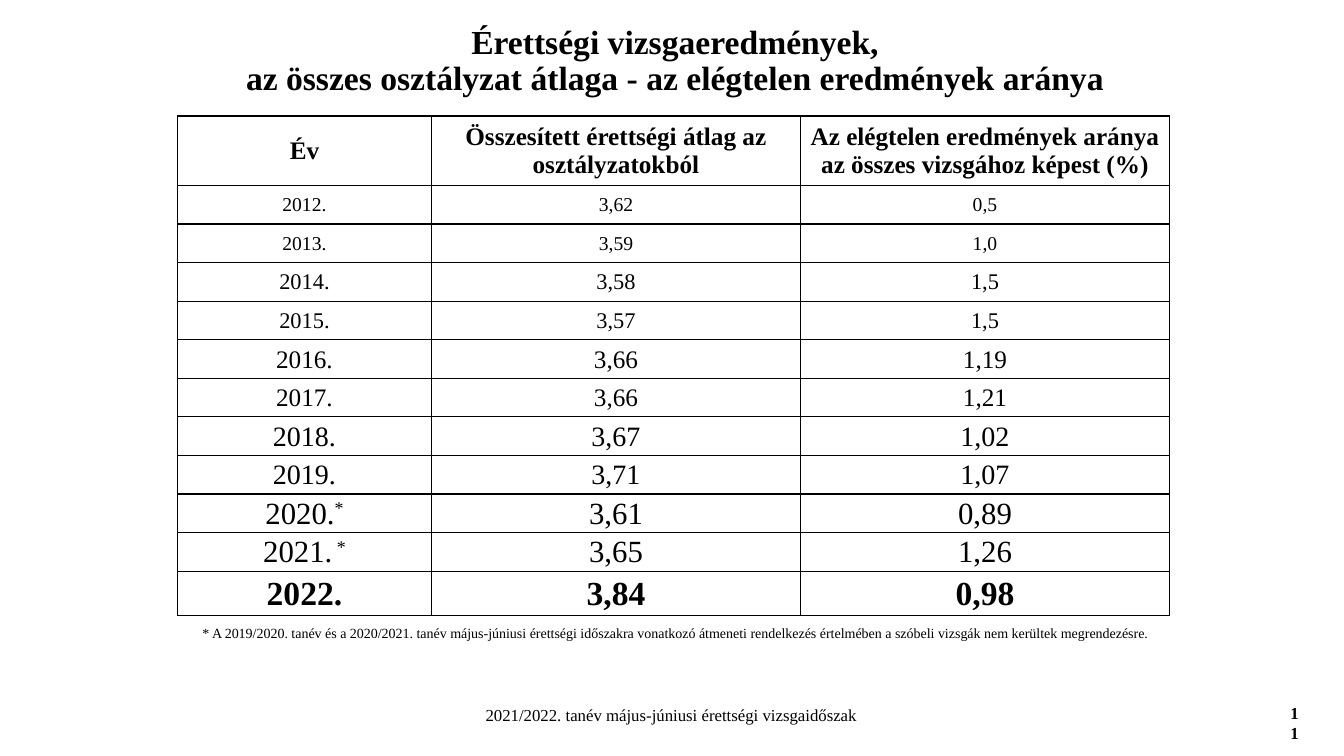
import pptx
import pptx.util
import pptx.dml.color
import pptx.enum.text
import pptx.oxml.ns
import lxml.etree

Inches = pptx.util.Inches
Pt = pptx.util.Pt
PP_ALIGN = pptx.enum.text.PP_ALIGN
MSO_ANCHOR = pptx.enum.text.MSO_ANCHOR

COLORS = {"text": "000000", "border": "000000", "background": "FFFFFF"}
HEADERS = (
    "Év",
    "Összesített érettségi átlag az osztályzatokból",
    "Az elégtelen eredmények aránya az összes vizsgához képest (%)",
)
RESULTS = [
    ("2012.", "3,62", "0,5", 14),
    ("2013.", "3,59", "1,0", 14),
    ("2014.", "3,58", "1,5", 16),
    ("2015.", "3,57", "1,5", 16),
    ("2016.", "3,66", "1,19", 18),
    ("2017.", "3,66", "1,21", 18),
    ("2018.", "3,67", "1,02", 20),
    ("2019.", "3,71", "1,07", 20),
    ("2020.*", "3,61", "0,89", 22),
    ("2021. *", "3,65", "1,26", 22),
    ("2022.", "3,84", "0,98", 24),
]


class SlideBuilder:
    font = "Times New Roman"

    def __init__(self, slide):
        self.slide = slide
        fill = slide.background.fill
        fill.solid()
        fill.fore_color.rgb = self.color("background")

    def color(self, name):
        return pptx.dml.color.RGBColor.from_string(COLORS[name])

    def style_run(self, r, size, bold):
        r.font.name = self.font
        r.font.size = Pt(size)
        r.font.bold = bold
        r.font.color.rgb = self.color("text")

    def text(self, box, text, size, bold=False, align=PP_ALIGN.CENTER, spacing=1.0):
        sp = self.slide.shapes.add_textbox(*map(Inches, box))
        tf = sp.text_frame
        tf.word_wrap = True
        tf.text = text
        for p in tf.paragraphs:
            p.alignment = align
            p.line_spacing = spacing
            for r in p.runs:
                self.style_run(r, size, bold)

    def border(self, cell):
        tcPr = cell._tc.get_or_add_tcPr()
        qn = pptx.oxml.ns.qn
        for index, side in enumerate(("lnL", "lnR", "lnT", "lnB")):
            ln = lxml.etree.Element(qn(f"a:{side}"), w=str(Pt(1)))
            fill = lxml.etree.SubElement(ln, qn("a:solidFill"))
            lxml.etree.SubElement(fill, qn("a:srgbClr"), val=COLORS["border"])
            tcPr.insert(index, ln)

    def cell(self, cell, text, size, bold):
        cell.fill.background()
        cell.vertical_anchor = MSO_ANCHOR.MIDDLE
        cell.margin_left = cell.margin_right = cell.margin_top = Inches(0.01)
        cell.margin_bottom = 0
        p = cell.text_frame.paragraphs[0]
        p.alignment = PP_ALIGN.CENTER
        body = text.rstrip("* ")
        for part in filter(None, (body, text[len(body):])):
            r = p.add_run()
            r.text = part
            self.style_run(r, size, bold)
            if part.endswith("*"):
                r.font._element.set("baseline", "30000")
        self.border(cell)

    def table(self, box, widths, heights, rows):
        frame = self.slide.shapes.add_table(len(rows), len(widths), *map(Inches, box))
        table = frame.table
        table.horz_banding = False
        for column, width in zip(table.columns, widths):
            column.width = Inches(width)
        for row, height, (*texts, size, bold) in zip(table.rows, heights, rows):
            row.height = Inches(height)
            for cell, text in zip(row.cells, texts):
                self.cell(cell, text, size, bold)


def main():
    prs = pptx.Presentation()
    prs.slide_width = Inches(13.33)
    prs.slide_height = Inches(7.5)
    s = SlideBuilder(prs.slides.add_slide(prs.slide_layouts[6]))

    s.text((3.59, 6.94, 6.14, 0.3),
           "2021/2022. tanév május-júniusi érettségi vizsgaidőszak", 12)
    s.text((12.7, 6.92, 0.29, 0.3), "11", 12, True, PP_ALIGN.LEFT)
    s.text((0.79, 0.2, 11.81, 0.59),
           "Érettségi vizsgaeredmények,\n"
           "az összes osztályzat átlaga - az elégtelen eredmények aránya",
           24, True, spacing=0.9)

    width, height, header, last = 9.84, 4.96, 0.69, 0.44
    plain = len(RESULTS) - 1
    heights = [header] + [(height - header - last) / plain] * plain + [last]
    rows = [(*HEADERS, 18, True)]
    rows += [(*result, result is RESULTS[-1]) for result in RESULTS]
    s.table((1.76, 1.15, width, height), (2.52, 3.66, 3.66), heights, rows)

    s.text((0.79, 6.15, 11.81, 0.27),
           "* A 2019/2020. tanév és a 2020/2021. tanév május-júniusi érettségi "
           "időszakra vonatkozó átmeneti rendelkezés értelmében a szóbeli vizsgák "
           "nem kerültek megrendezésre.", 10)
    prs.save("out.pptx")


if __name__ == "__main__":
    main()
